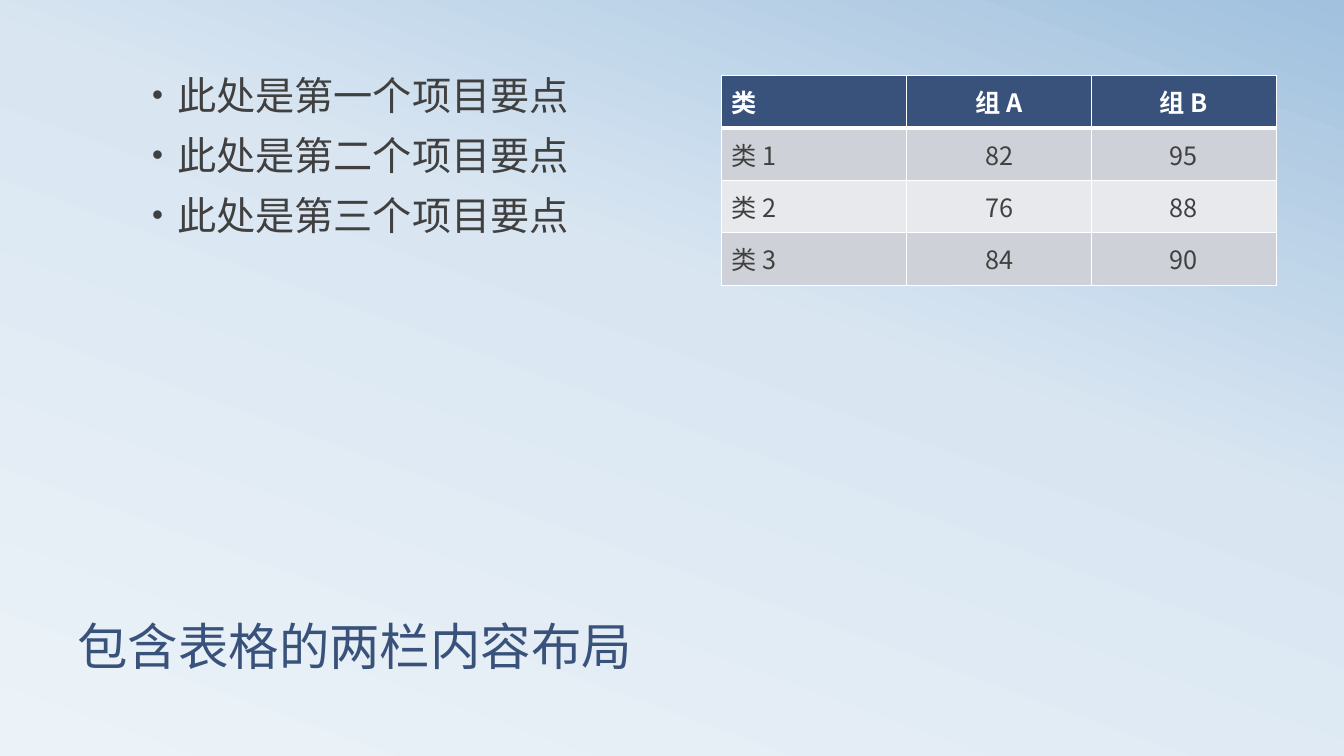
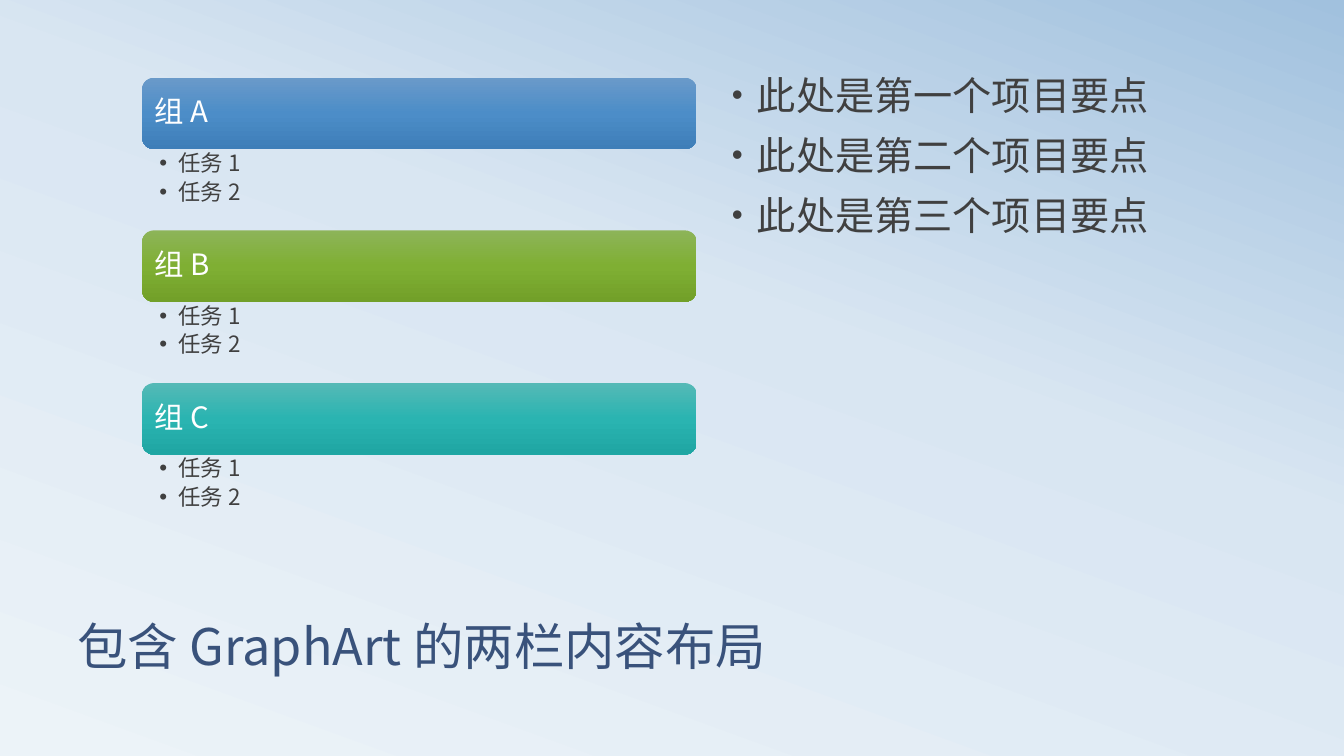
from copy import deepcopy
from dataclasses import dataclass
from typing import Any, Optional

from lxml.etree import SubElement as Sub
from pptx import Presentation
from pptx.dml.color import RGBColor as Rgb
from pptx.enum.shapes import MSO_SHAPE as Kind
from pptx.enum.text import MSO_ANCHOR as Anchor, PP_ALIGN as Align
from pptx.oxml.ns import qn
from pptx.util import Inches, Pt

FONT = "Noto Sans CJK SC"
NAVY = Rgb(0x39, 0x52, 0x7B)
DARK = Rgb(0x40, 0x40, 0x40)
WHITE = Rgb(0xFF, 0xFF, 0xFF)
GREY = Rgb(0xCE, 0xD1, 0xD7)
PALE = Rgb(0xE8, 0xE9, 0xEC)
SKY = (Rgb(0xEC, 0xF3, 0xF8), Rgb(0xD9, 0xE6, 0xF2), Rgb(0xA1, 0xC1, 0xDE))
BLUE = (Rgb(0x6A, 0x9A, 0xC9), Rgb(0x4C, 0x8D, 0xC8), Rgb(0x3E, 0x7E, 0xB8))
GREEN = (Rgb(0x8D, 0xB4, 0x59), Rgb(0x7F, 0xAF, 0x33), Rgb(0x72, 0xA0, 0x29))
TEAL = (Rgb(0x55, 0xB9, 0xB6), Rgb(0x2A, 0xB4, 0xB1), Rgb(0x1F, 0xA6, 0xA3))

LEFT, RIGHT, TOP, WIDE = 1.41, 7.16, 0.75, 5.5
BAR_TOP, BAR_LAST, BAR_H, TASK_H = 0.77, 3.8, 0.71, 0.81
ROW_H = 0.52

POINTS = ["此处是第一个项目要点", "此处是第二个项目要点", "此处是第三个项目要点"]
TASKS = ["任务 1", "任务 2"]
ROWS = [
    ["类", "组 A", "组 B"],
    ["类 1", "82", "95"],
    ["类 2", "76", "88"],
    ["类 3", "84", "90"],
]


@dataclass(frozen=True)
class Style:
    size: int
    color: Rgb
    bold: bool = False
    align: Align = Align.LEFT
    line: float = 1.0
    before: int = 0
    after: int = 0
    dent: float = 0
    dot: int = 100


@dataclass(frozen=True)
class Box:
    left: float
    top: float
    width: float
    height: float

    def place(self) -> list[int]:
        return [Inches(v) for v in (self.left, self.top, self.width, self.height)]


@dataclass(frozen=True)
class Group:
    name: str
    tones: tuple


HEAD = Style(36, NAVY, line=0.8)
BODY = Style(28, DARK, line=0.8, before=16, dent=0.25, dot=80)
BAR = Style(21, WHITE, line=0.9, after=35)
TASK = Style(16, DARK, line=0.9, after=20, dent=0.19)
GROUPS = [Group("组 A", BLUE), Group("组 B", GREEN), Group("组 C", TEAL)]


def put(thing: Any, vals: dict[str, Any]) -> None:
    for name, val in vals.items():
        setattr(thing, name, val)


def pads(left: float, top: float, right: float, base: float) -> dict[str, int]:
    sides = ("margin_left", "margin_top", "margin_right", "margin_bottom")
    return {s: Inches(v) for s, v in zip(sides, (left, top, right, base))}


def shade(fill: Any, root: Any, tones: tuple, mid: float, turn: float) -> None:
    fill.gradient()
    fill.gradient_angle = turn
    stops = next(root.iter(qn("a:gsLst")))
    stops.append(deepcopy(stops[-1]))
    for stop, tone, spot in zip(fill.gradient_stops, tones, (0, mid, 1)):
        stop.color.rgb = tone
        stop.position = spot


def write(frame: Any, lines: list[str], style: Style) -> None:
    for i, line in enumerate(lines):
        para = frame.add_paragraph() if i else frame.paragraphs[0]
        put(para, {"alignment": style.align, "line_spacing": style.line,
                   "space_before": Pt(style.before)})
        props = para._p.get_or_add_pPr()
        if style.after:
            gap = Sub(props, qn("a:spcAft"))
            Sub(gap, qn("a:spcPct"), val=str(style.after * 1000))
        if style.dent:
            dent = Inches(style.dent)
            props.set("marL", str(dent))
            props.set("indent", str(-dent))
            tint = Sub(props, qn("a:buClr"))
            Sub(tint, qn("a:srgbClr"), val=str(style.color))
            Sub(props, qn("a:buSzPct"), val=str(style.dot * 1000))
            Sub(props, qn("a:buFont"), typeface="Arial")
            Sub(props, qn("a:buChar"), char="•")
        run = para.add_run()
        run.text = line
        put(run.font, {"name": FONT, "size": Pt(style.size), "bold": style.bold})
        run.font.color.rgb = style.color
        Sub(run._r.get_or_add_rPr(), qn("a:ea"), typeface=FONT)


def add_text(slide: Any, box: Box, lines: list[str], style: Style,
             form: Optional[dict[str, Any]] = None) -> None:
    frame = slide.shapes.add_textbox(*box.place()).text_frame
    put(frame, {"word_wrap": True, **(form or {})})
    write(frame, lines, style)


def add_slide(deck: Any, title: str) -> Any:
    slide = deck.slides.add_slide(deck.slide_layouts[6])
    add_text(slide, Box(0.67, 5.58, 12, 1.17), [title], HEAD,
             {"vertical_anchor": Anchor.BOTTOM})
    return slide


def add_points(slide: Any, left: float) -> None:
    add_text(slide, Box(left, TOP, WIDE, 4.58), POINTS, BODY)


def edge(cell: Any, side: str, width: int) -> None:
    line = Sub(cell._tc.get_or_add_tcPr(), qn(f"a:ln{side}"), w=str(Pt(width)))
    Sub(Sub(line, qn("a:solidFill")), qn("a:srgbClr"), val=str(WHITE))


def add_grid(slide: Any) -> None:
    box = Box(RIGHT, TOP, WIDE, ROW_H * len(ROWS))
    table = slide.shapes.add_table(len(ROWS), len(ROWS[0]), *box.place()).table
    for r, row in enumerate(ROWS):
        for c, text in enumerate(row):
            cell = table.cell(r, c)
            cell.vertical_anchor = Anchor.MIDDLE
            widths = {"L": 1, "R": 1, "T": 3 if r == 1 else 1, "B": 1 if r else 3}
            for side, width in widths.items():
                edge(cell, side, width)
            cell.fill.solid()
            cell.fill.fore_color.rgb = (GREY if r % 2 else PALE) if r else NAVY
            align = Align.CENTER if c else Align.LEFT
            style = Style(18, DARK if r else WHITE, bold=not r, align=align)
            write(cell.text_frame, [text], style)


def add_group(slide: Any, group: Group, top: float) -> None:
    bar = slide.shapes.add_shape(Kind.ROUNDED_RECTANGLE,
                                 *Box(LEFT, top, WIDE, BAR_H).place())
    bar.shadow.inherit = False
    bar.line.fill.background()
    shade(bar.fill, bar.element, group.tones, 0.5, 270)
    put(bar.text_frame, {"word_wrap": True, "vertical_anchor": Anchor.MIDDLE,
                         **pads(0.09, 0.09, 0.09, 0.09)})
    write(bar.text_frame, [group.name], BAR)
    add_text(slide, Box(LEFT, top + BAR_H, WIDE, TASK_H), TASKS, TASK,
             pads(0.17, 0.03, 0.16, 0.03))


def main() -> None:
    deck = Presentation()
    put(deck, {"slide_width": Inches(13.33), "slide_height": Inches(7.5)})
    base = deck.slide_master
    shade(base.background.fill, base.element, SKY, 0.58, 70)

    first = add_slide(deck, "包含表格的两栏内容布局")
    add_points(first, LEFT)
    add_grid(first)

    second = add_slide(deck, "包含 GraphArt 的两栏内容布局")
    step = (BAR_LAST - BAR_TOP) / (len(GROUPS) - 1)
    for i, group in enumerate(GROUPS):
        add_group(second, group, BAR_TOP + i * step)
    add_points(second, RIGHT)

    deck.save("out.pptx")


if __name__ == "__main__":
    main()
